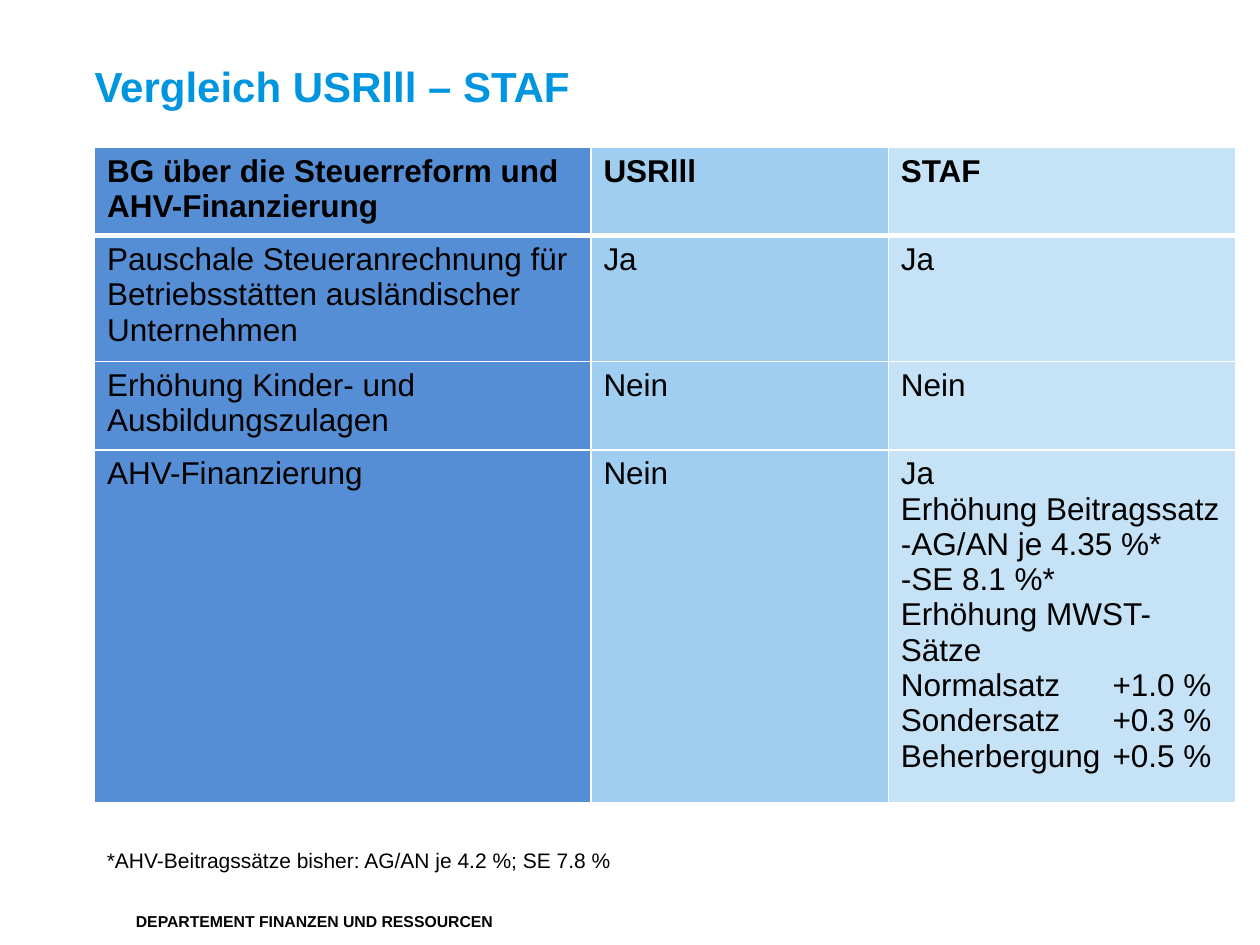
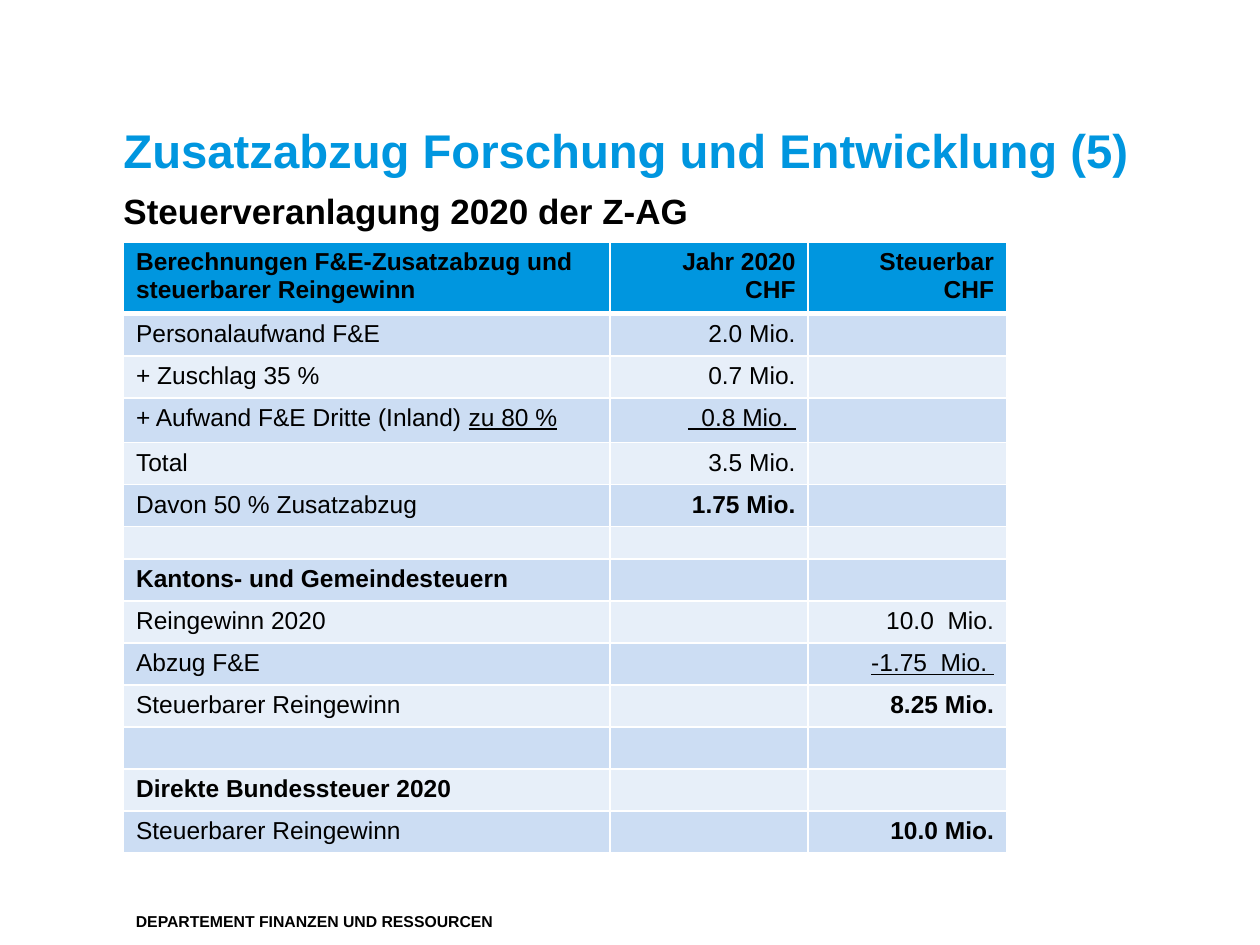
import pptx
import pptx.util
import pptx.dml.color
import pptx.enum.text
import pptx.oxml
import pptx.oxml.ns
from lxml import etree

PP = pptx.enum.text
FONT = "Arial"
COLORS = {
    "text": "000000", "title": "0096DF", "line": "FFFFFF",
    "topic": "558ED5", "usr": "A0CEF0", "staf": "C6E2F6",
    "head": "0096DF", "odd": "CCDDF3", "even": "E7EFF9",
}
INSET = 0.1  # inches beside text in cells

prs = pptx.Presentation()
prs.slide_width = pptx.util.Inches(10)
prs.slide_height = pptx.util.Inches(7.5)
# Grid of 100 columns by 75 rows
COL = prs.slide_width / 100
ROW = prs.slide_height / 75


def grid(box):
    """Turn left, top, width, height in columns and rows into lengths."""
    return [pptx.util.Emu(round(n * unit)) for n, unit in zip(box, (COL, ROW, COL, ROW))]


def rgb(name):
    return pptx.dml.color.RGBColor.from_string(COLORS[name])


def add_runs(p, runs, size, color="text", bold=False):
    """Runs are a string or (text, style) pairs; style holds b and u."""
    if isinstance(runs, str):
        runs = [(runs, "")]
    for text, style in runs:
        r = p.add_run()
        r.text = text
        r.font.name = FONT
        r.font.size = pptx.util.Pt(size)
        r.font.color.rgb = rgb(color)
        r.font.bold = bold or "b" in style
        if "u" in style:
            r.font.underline = True


def add_text(slide, box, text, size, bold=False):
    sp = slide.shapes.add_textbox(*grid(box))
    sp.text_frame.word_wrap = True
    add_runs(sp.text_frame.paragraphs[0], text, size, bold=bold)


def fill_placeholder(sp, box, text, size, color):
    sp.left, sp.top, sp.width, sp.height = grid(box)
    tf = sp.text_frame
    tf.margin_left = tf.margin_top = tf.margin_right = tf.margin_bottom = 0
    tf.vertical_anchor = PP.MSO_ANCHOR.TOP
    tf.auto_size = PP.MSO_AUTO_SIZE.NONE
    p = tf.paragraphs[0]
    p.alignment = PP.PP_ALIGN.LEFT
    p.line_spacing = 1.1
    p.space_before = pptx.util.Pt(0)
    add_runs(p, text, size, color, bold=True)
    return p


def new_slide(layout, title, title_box, size):
    """Slide with the shared title style and department footer."""
    slide = prs.slides.add_slide(prs.slide_layouts[layout])
    fill_placeholder(slide.shapes.title, title_box, title, size, "title")
    add_text(slide, (9.8, 71.9, 63.8, 2.5), "DEPARTEMENT FINANZEN UND RESSOURCEN", 9, bold=True)
    return slide


def set_borders(cell, header):
    tc_pr = cell._tc.get_or_add_tcPr()
    for i, side in enumerate(("lnL", "lnR", "lnT", "lnB")):
        width = 3 if header and side == "lnB" else 1
        ln = pptx.oxml.parse_xml(
            f'<a:{side} {pptx.oxml.ns.nsdecls("a")} w="{pptx.util.Pt(width)}">'
            f'<a:solidFill><a:srgbClr val="{COLORS["line"]}"/></a:solidFill></a:{side}>')
        tc_pr.insert(i, ln)


def add_tab(p, inches):
    tabs = etree.SubElement(p._p.get_or_add_pPr(), pptx.oxml.ns.qn("a:tabLst"))
    etree.SubElement(tabs, pptx.oxml.ns.qn("a:tab"), pos=str(pptx.util.Inches(inches)), algn="l")


def fill_cell(cell, content, size, bold, align, tab):
    """A string holds one paragraph a line; a list holds styled runs."""
    paragraphs = content.split("\n") if isinstance(content, str) else [content]
    tf = cell.text_frame
    for i, runs in enumerate(paragraphs):
        p = tf.paragraphs[0] if i == 0 else tf.add_paragraph()
        p.alignment = align
        if "\t" in runs:
            add_tab(p, tab)
        if runs:
            add_runs(p, runs, size, bold=bold)
        else:
            etree.SubElement(p._p, pptx.oxml.ns.qn("a:endParaRPr"), sz=str(size * 100))


def add_table(slide, left, top, widths, heights, rows, size, fill_rule,
              number_align=PP.PP_ALIGN.LEFT, tab=0):
    box = grid((left, top, sum(widths), sum(heights)))
    table = slide.shapes.add_table(len(rows), len(widths), *box).table
    for column, width in zip(table.columns, widths):
        column.width = round(width * COL)
    for r, (height, row) in enumerate(zip(heights, rows)):
        table.rows[r].height = round(height * ROW)
        # Empty rows take smaller type when they are narrow
        row_size = size if any(row) or height > 3 else 9
        for c, content in enumerate(row):
            cell = table.cell(r, c)
            cell.margin_left = cell.margin_right = pptx.util.Inches(INSET)
            cell.fill.solid()
            cell.fill.fore_color.rgb = rgb(fill_rule(r, c))
            set_borders(cell, r == 0)
            fill_cell(cell, content, row_size, r == 0,
                      number_align if c else PP.PP_ALIGN.LEFT, tab)


def comparison_slide():
    slide = new_slide(5, "Vergleich USRlll – STAF", (7.5, 4.4, 91.3, 6.7), 24)
    rows = [
        ("BG über die Steuerreform und AHV-Finanzierung", "USRlll", "STAF"),
        ("Pauschale Steueranrechnung für Betriebsstätten ausländischer Unternehmen", "Ja", "Ja"),
        ("Erhöhung Kinder- und Ausbildungszulagen", "Nein", "Nein"),
        ("AHV-Finanzierung", "Nein",
         "Ja\nErhöhung Beitragssatz\n-AG/AN je 4.35 %*\n-SE 8.1 %*\nErhöhung MWST-Sätze\n"
         "Normalsatz\t+1.0 %\nSondersatz\t+0.3 %\nBeherbergung\t+0.5 %"),
    ]
    add_table(slide, 7.5, 11.7, (39.4, 23.6, 27.6), (6.8, 9.3, 6.9, 26.2), rows, 18,
              lambda r, c: ("topic", "usr", "staf")[c], tab=1.68)
    # Footnote
    add_text(slide, (7.5, 66.8, 72.4, 3),
             "*AHV-Beitragssätze bisher: AG/AN je 4.2 %; SE 7.8 %", 12)


def deduction_slide():
    slide = new_slide(1, "Zusatzabzug Forschung und Entwicklung (5)", (9.8, 9.2, 82.7, 6.7), 27)
    # Subtitle without bullet
    p = fill_placeholder(slide.placeholders[1], (9.8, 14.7, 88.2, 55.9),
                         "Steuerveranlagung 2020 der Z-AG", 20, "text")
    p.space_after = pptx.util.Pt(6)
    p_pr = p._p.get_or_add_pPr()
    p_pr.set("marL", "0")
    p_pr.set("indent", "0")
    etree.SubElement(p_pr, pptx.oxml.ns.qn("a:buNone"))
    # Calculation
    rows = [
        ("Berechnungen F&E-Zusatzabzug und steuerbarer Reingewinn",
         "Jahr 2020\nCHF", "Steuerbar\nCHF"),
        ("Personalaufwand F&E", "2.0 Mio.", ""),
        ("+ Zuschlag 35 %", "0.7 Mio.", ""),
        ([("+ Aufwand F&E Dritte (Inland) ", ""), ("zu 80 %", "u")], [("  0.8 Mio. ", "u")], ""),
        ("Total", "3.5 Mio.", ""),
        ("Davon 50 % Zusatzabzug", [("1.75 Mio.", "b")], ""),
        ("", "", ""),
        ([("Kantons- und Gemeindesteuern", "b")], "", ""),
        ("Reingewinn 2020", "", "10.0  Mio."),
        ("Abzug F&E", "", [("-1.75  Mio. ", "u")]),
        ("Steuerbarer Reingewinn", "", [("8.25 Mio.", "b")]),
        ("", "", ""),
        ([("Direkte Bundessteuer 2020", "b")], "", ""),
        ("Steuerbarer Reingewinn", "", [("10.0 Mio.", "b")]),
    ]
    heights = [5.7, 3.33, 3.2, 3.55] + [3.33] * 2 + [2.55] + [3.33] * 4 + [3.2, 3.2, 3.33]
    add_table(slide, 9.8, 19.2, (38.6, 15.75, 15.75), heights, rows, 14,
              lambda r, c: "head" if r == 0 else ("even", "odd")[r % 2],
              number_align=PP.PP_ALIGN.RIGHT)


def main():
    comparison_slide()
    deduction_slide()
    prs.save("out.pptx")


if __name__ == "__main__":
    main()
